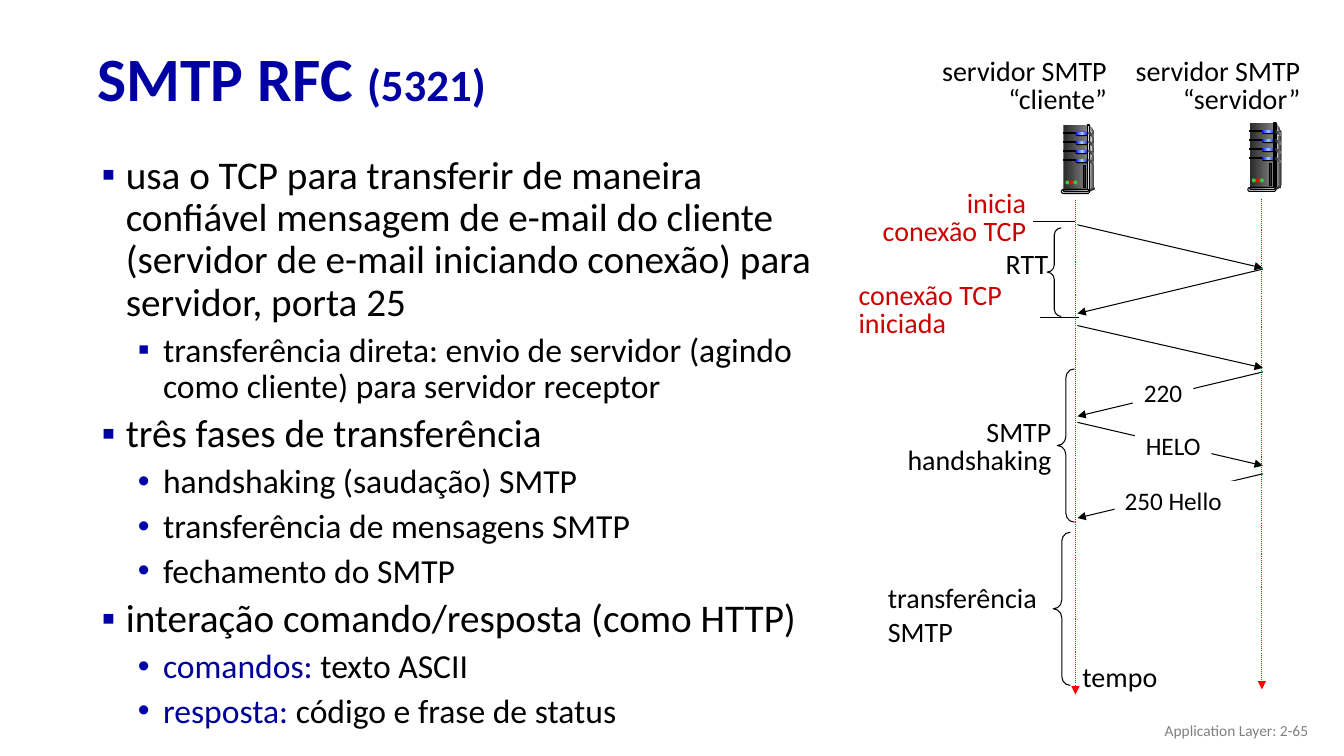
from copy import deepcopy
from lxml import etree
from pptx import Presentation
from pptx.dml.color import RGBColor
from pptx.enum.dml import MSO_LINE
from pptx.enum.shapes import MSO_CONNECTOR, MSO_SHAPE
from pptx.enum.text import MSO_ANCHOR, PP_ALIGN
from pptx.oxml.ns import qn
from pptx.util import Cm, Pt

LEFT, CENTER, RIGHT = PP_ALIGN.LEFT, PP_ALIGN.CENTER, PP_ALIGN.RIGHT
TOP, MIDDLE = MSO_ANCHOR.TOP, MSO_ANCHOR.MIDDLE
RECTANGLE, CAPSULE, OVAL = MSO_SHAPE.RECTANGLE, MSO_SHAPE.ROUNDED_RECTANGLE, MSO_SHAPE.OVAL
BRACE, STRAIGHT, DOTTED = MSO_SHAPE.LEFT_BRACE, MSO_CONNECTOR.STRAIGHT, MSO_LINE.ROUND_DOT

FONT = "Calibri"
BLACK, WHITE, RED, GRAY = "000000", "FFFFFF", "CC0000", "808080"
TITLE_BLUE, SQUARE_BLUE, DOT_BLUE, WORD_BLUE = "0000A3", "0000A3", "0000A8", "000099"
DARK = ("292929", "808080")
LAMP = ("0000FF", "99CCFF", "0000FF")

TITLE = [("SMTP RFC ", 44), ("(5321)", 32)]
BULLETS = [
    (0, "▪", [("usa o TCP para transferir de maneira confiável mensagem de e-mail do cliente "
               "(servidor de e-mail iniciando conexão) para servidor, porta 25", BLACK)]),
    (1, "▪", [("transferência direta: envio de servidor (agindo como cliente) "
               "para servidor receptor", BLACK)]),
    (0, "▪", [("três fases de transferência", BLACK)]),
    (1, "•", [("handshaking (saudação) SMTP", BLACK)]),
    (1, "•", [("transferência de mensagens SMTP", BLACK)]),
    (1, "•", [("fechamento do SMTP", BLACK)]),
    (0, "▪", [("interação comando/resposta (como HTTP)", BLACK)]),
    (1, "•", [("comandos:", WORD_BLUE), (" texto ASCII", BLACK)]),
    (1, "•", [("resposta:", WORD_BLUE), (" código e frase de status", BLACK)]),
]
LEVELS = [(28, 0.39, -0.24), (24, 0.76, -0.25)]

LABELS = [
    ((9.23, 0.53, 1.85, 0.68), ["servidor SMTP\n“cliente”"], BLACK, RIGHT, 0.85, False),
    ((11.15, 0.53, 1.85, 0.68), ["servidor SMTP\n“servidor”"], BLACK, RIGHT, 0.85, False),
    ((8.64, 1.84, 1.64, 0.68), ["inicia", "conexão TCP"], RED, RIGHT, 0.85, False),
    ((9.88, 2.45, 0.63, 0.39), ["RTT"], BLACK, LEFT, 0.85, False),
    ((8.42, 2.75, 2.4, 0.68), ["conexão TCP\niniciada"], RED, LEFT, 0.85, True),
    ((8.71, 4.11, 1.82, 0.68), ["SMTP handshaking"], BLACK, RIGHT, 0.85, True),
    ((8.71, 5.71, 1.82, 0.96), ["transferência SMTP"], BLACK, LEFT, 1, True),
    ((10.64, 6.54, 0.95, 0.39), ["tempo"], BLACK, LEFT, 0.85, False),
]
CLIENT_X, SERVER_X = 10.69, 12.53
MESSAGES = [(2.23, 2.66), (2.67, 3.11), (3.23, 3.65), (3.69, 4.13), (4.19, 4.62), (4.7, 5.14)]
MESSAGE_LABELS = [
    ((11.24, 3.69, 0.6, 0.4), "220", CENTER),
    ((11.06, 4.77, 1.23, 0.4), "250 Hello", LEFT),
    ((11.26, 4.22, 0.76, 0.4), "HELO", CENTER),
]
TIMELINES = [(10.67, 1.98, 10.67, 6.89), (12.52, 1.97, 12.52, 6.84)]
TICKS = [(10.25, 2.2, 10.67, 2.2), (10.32, 3.15, 10.71, 3.15)]
BRACES = [(10.39, 2.26, 0.14, 0.88), (10.49, 3.66, 0.17, 1.52), (10.45, 5.28, 0.17, 1.52)]
SERVERS = [(12.38, 1.22), (10.53, 1.24)]


def inches(value):
    return Cm(value * 2.54)


def color(value):
    return RGBColor.from_string(value)


def paint(shape, fill=None, outline=None):
    shape.shadow.inherit = False
    if fill is None:
        shape.fill.background()
    elif isinstance(fill, str):
        shape.fill.solid()
        shape.fill.fore_color.rgb = color(fill)
    else:
        shape.fill.gradient()
        shape.fill.gradient_angle = 0
        stop_list = shape._element.xpath(".//a:gsLst")[0]
        for _ in fill[2:]:
            stop_list.append(deepcopy(stop_list[-1]))
        for index, (stop, value) in enumerate(zip(shape.fill.gradient_stops, fill)):
            stop.position = index / (len(fill) - 1)
            stop.color.rgb = color(value)
    if outline:
        shape.line.color.rgb = color(outline)
        shape.line.width = Pt(0.75)
    else:
        shape.line.fill.background()


def add_block(shapes, kind, box, fill=None, outline=None, adjustment=None):
    shape = shapes.add_shape(kind, *map(inches, box))
    paint(shape, fill, outline)
    if adjustment is not None:
        shape.adjustments[0] = adjustment
    return shape


def add_line(shapes, ends, line_color=BLACK, arrow=False, dash=None):
    line = shapes.add_connector(STRAIGHT, *map(inches, ends))
    line.line.color.rgb = color(line_color)
    line.line.width = Pt(0.75)
    if dash:
        line.line.dash_style = dash
    if arrow:
        etree.SubElement(line.line._get_or_add_ln(), qn("a:tailEnd"), type="triangle")
    etree.SubElement(line._element.spPr, qn("a:effectLst"))


def add_run(paragraph, text, size, text_color, bold=False):
    run = paragraph.add_run()
    run.text = text
    run.font.name, run.font.size, run.font.bold = FONT, Pt(size), bold
    run.font.color.rgb = color(text_color)


def write(shape, paragraphs, size, text_color, align=LEFT, spacing=1, wrap=True, anchor=TOP):
    frame = shape.text_frame
    frame.word_wrap, frame.vertical_anchor = wrap, anchor
    for index, text in enumerate(paragraphs):
        paragraph = frame.add_paragraph() if index else frame.paragraphs[0]
        paragraph.alignment, paragraph.line_spacing = align, spacing
        for number, line in enumerate(text.split("\n")):
            if number:
                paragraph.add_line_break()
            add_run(paragraph, line, size, text_color)


def add_bullet(paragraph, mark, left, hanging):
    properties = paragraph._p.get_or_add_pPr()
    properties.set("marL", str(inches(left)))
    properties.set("indent", str(inches(hanging)))
    bullet_color = etree.SubElement(properties, qn("a:buClr"))
    etree.SubElement(bullet_color, qn("a:srgbClr"), val=SQUARE_BLUE if mark == "▪" else DOT_BLUE)
    etree.SubElement(properties, qn("a:buFont"), typeface="Arial")
    etree.SubElement(properties, qn("a:buChar"), char=mark)


def add_server(slide, left, top):
    shapes = slide.shapes.add_group_shape().shapes

    def block(kind, x, y, width, height, fill, outline=None):
        adjustment = 0.5 if kind == CAPSULE else None
        add_block(shapes, kind, (left + x, top + y, width, height), fill, outline, adjustment)

    def outline_shape(points, fill):
        corners = [(inches(left + x), inches(top + y)) for x, y in points]
        builder = shapes.build_freeform(*corners[0])
        builder.add_line_segments(corners[1:], close=True)
        paint(builder.convert_to_shape(), fill)

    slots = [0.07 + 0.09 * index for index in range(4)]
    outline_shape([(0.28, 0), (0.33, 0.08), (0.33, 0.62), (0.26, 0.65)], ("DDDDDD", "333333"))
    block(RECTANGLE, 0.02, 0, 0.24, 0.65, DARK)
    outline_shape([(0.28, 0.04), (0.31, 0.09), (0.29, 0.4), (0.28, 0.63)], (GRAY, "F8F8F8"))
    for y in slots:
        block(RECTANGLE, 0.02, y, 0.14, 0.01, BLACK, BLACK)
        block(CAPSULE, 0.14, y, 0.14, 0.04, BLACK)
        block(CAPSULE, 0.14, y, 0.13, 0.03, LAMP)
    block(RECTANGLE, 0.26, 0, 0.02, 0.65, ("333333", "DDDDDD", "333333"), BLACK)
    for y in slots:
        outline_shape([(0.27, y), (0.33, y + 0.03), (0.33, y + 0.06), (0.27, y + 0.02)], DARK)
    block(OVAL, 0.32, 0.62, 0.01, 0.03, "333333")
    outline_shape([(0.27, 0.64), (0.27, 0.67), (0.33, 0.64), (0.33, 0.62)], "333333")
    block(CAPSULE, 0, 0.64, 0.28, 0.04, "DDDDDD", BLACK)
    block(CAPSULE, 0.02, 0.64, 0.25, 0.02, ("44546A", "E7E6E6"), BLACK)
    for index, light in enumerate(("33CC33", "FF0000", "33CC33")):
        block(OVAL, 0.04 + 0.04 * index, 0.55, 0.04, 0.04, light)
    block(RECTANGLE, 0.22, 0.4, 0.02, 0.22, "292929", BLACK)


presentation = Presentation()
presentation.slide_width, presentation.slide_height = Cm(33.87), Cm(19.05)
slide = presentation.slides.add_slide(presentation.slide_layouts[6])
shapes = slide.shapes

title = shapes.add_textbox(*map(inches, (0.87, 0.32, 11.5, 0.98))).text_frame
title.word_wrap, title.vertical_anchor = True, MIDDLE
title.paragraphs[0].line_spacing = 0.9
for text, size in TITLE:
    add_run(title.paragraphs[0], text, size, TITLE_BLUE, True)

body = shapes.add_textbox(*map(inches, (0.76, 1.49, 7.53, 5.08))).text_frame
body.word_wrap = True
for index, (level, mark, runs) in enumerate(BULLETS):
    paragraph = body.add_paragraph() if index else body.paragraphs[0]
    size, left, hanging = LEVELS[level]
    add_bullet(paragraph, mark, left, hanging)
    paragraph.level, paragraph.line_spacing = level, 0.9
    paragraph.space_before = Pt(6 if index else 0)
    for text, text_color in runs:
        add_run(paragraph, text, size, text_color)

for ends in TIMELINES:
    add_line(shapes, ends, "FF0000", True, DOTTED)
for index, (start, end) in enumerate(MESSAGES):
    origin, target = (SERVER_X, CLIENT_X) if index % 2 else (CLIENT_X, SERVER_X)
    add_line(shapes, (origin, start, target, end), arrow=True)
for ends in TICKS:
    add_line(shapes, ends)
for box in BRACES:
    add_block(shapes, BRACE, box, outline=BLACK, adjustment=0.52)
for left, top in SERVERS:
    add_server(slide, left, top)
for box, text, align in MESSAGE_LABELS:
    write(add_block(shapes, RECTANGLE, box, WHITE), [text], 18, BLACK, align)
for box, paragraphs, text_color, align, spacing, wrap in LABELS:
    label = shapes.add_textbox(*map(inches, box))
    write(label, paragraphs, 20, text_color, align, spacing, wrap)
footer = shapes.add_textbox(*map(inches, (10.08, 7.05, 3, 0.4)))
write(footer, ["Application Layer: 2-65"], 11, GRAY, RIGHT, anchor=MIDDLE)

presentation.save("out.pptx")
